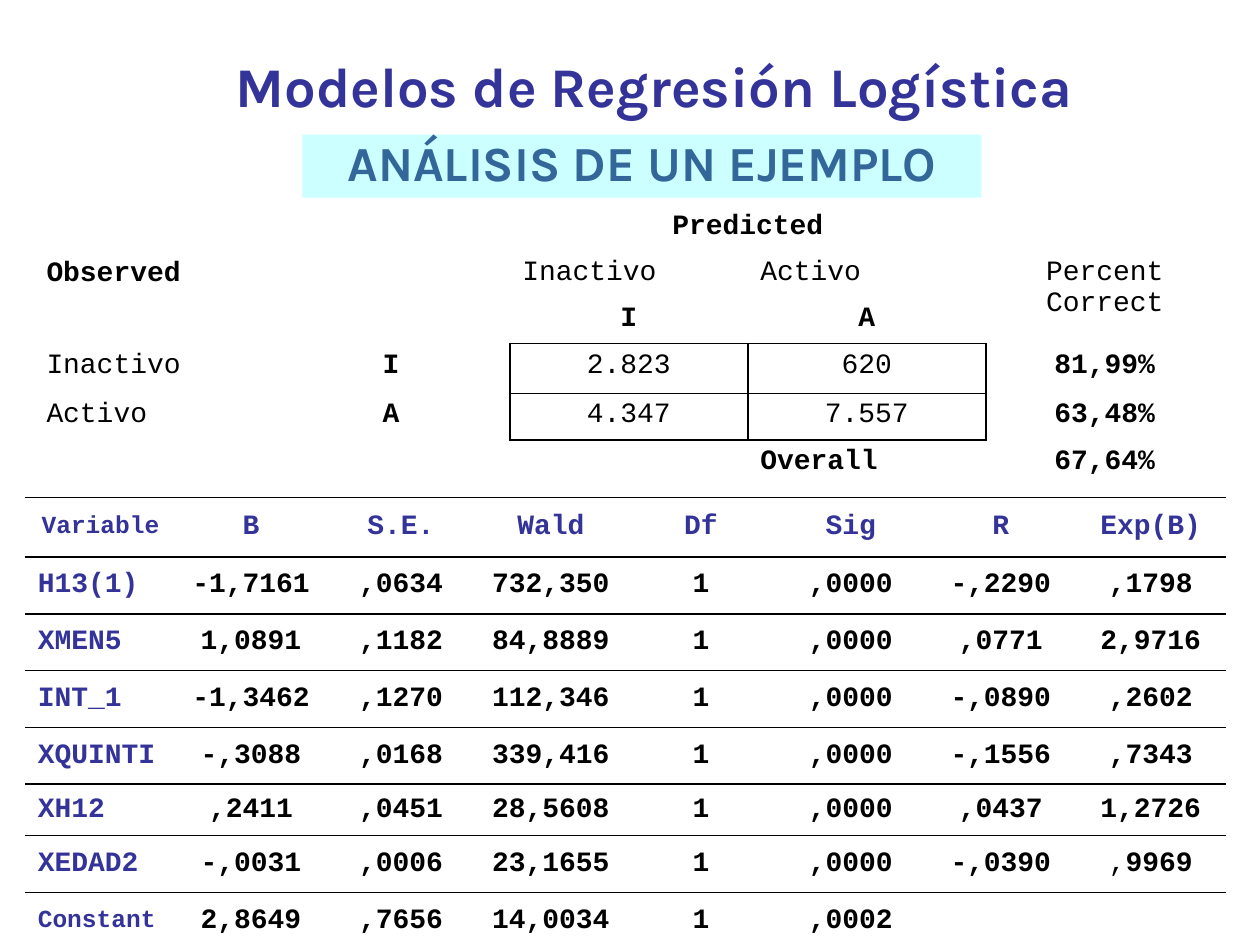
from lxml import etree
from pptx import Presentation
from pptx.dml.color import RGBColor
from pptx.enum.shapes import MSO_SHAPE
from pptx.enum.text import MSO_ANCHOR, MSO_AUTO_SIZE, PP_ALIGN
from pptx.oxml.ns import qn
from pptx.util import Pt

LEFT, CENTER = PP_ALIGN.LEFT, PP_ALIGN.CENTER
TOP, MIDDLE = MSO_ANCHOR.TOP, MSO_ANCHOR.MIDDLE
RECTANGLE = MSO_SHAPE.RECTANGLE
FIT_SHAPE = MSO_AUTO_SIZE.SHAPE_TO_FIT_TEXT
INDIGO = RGBColor(0x33, 0x33, 0x99)
STEEL = RGBColor(0x33, 0x66, 0x99)
PALE_CYAN = RGBColor(0xCC, 0xFF, 0xFF)
BLACK = RGBColor(0, 0, 0)
NO_TABLE_STYLE = "{2D5ABB26-0587-4C30-8999-92F81FD0307C}"

# row, column, text, bold, alignment
CLASSIFICATION = [
    (0, 0, "Observed", True, LEFT),
    (0, 2, "Predicted", True, CENTER),
    (1, 2, "Inactivo", False, LEFT),
    (1, 3, "Activo", False, LEFT),
    (1, 4, "Percent Correct", False, CENTER),
    (2, 2, "I", True, CENTER),
    (2, 3, "A", True, CENTER),
    (3, 0, "Inactivo", False, LEFT),
    (3, 1, "I", True, CENTER),
    (3, 2, "2.823", False, CENTER),
    (3, 3, "620", False, CENTER),
    (3, 4, "81,99%", True, CENTER),
    (4, 0, "Activo", False, LEFT),
    (4, 1, "A", True, CENTER),
    (4, 2, "4.347", False, CENTER),
    (4, 3, "7.557", False, CENTER),
    (4, 4, "63,48%", True, CENTER),
    (5, 3, "Overall", True, LEFT),
    (5, 4, "67,64%", True, CENTER),
]
MERGES = [(0, 0, 2, 0), (0, 1, 2, 1), (0, 2, 0, 3), (1, 4, 2, 4), (5, 0, 5, 2)]
COUNT_BORDERS = {(3, 2): "LRTB", (3, 3): "LRTB", (4, 2): "LRT", (4, 3): "LRTB"}

COEFFICIENTS = [
    ("Variable", "B", "S.E.", "Wald", "Df", "Sig", "R", "Exp(B)"),
    ("H13(1)", "-1,7161", ",0634", "732,350", "1", ",0000", "-,2290", ",1798"),
    ("XMEN5", "1,0891", ",1182", "84,8889", "1", ",0000", ",0771", "2,9716"),
    ("INT_1", "-1,3462", ",1270", "112,346", "1", ",0000", "-,0890", ",2602"),
    ("XQUINTI", "-,3088", ",0168", "339,416", "1", ",0000", "-,1556", ",7343"),
    ("XH12", ",2411", ",0451", "28,5608", "1", ",0000", ",0437", "1,2726"),
    ("XEDAD2", "-,0031", ",0006", "23,1655", "1", ",0000", "-,0390", ",9969"),
    ("Constant", "2,8649", ",7656", "14,0034", "1", ",0002", "", ""),
]
SMALL_LABELS = ("Variable", "Constant")


def space_before_percent(paragraph, percent):
    spacing = etree.SubElement(paragraph._p.get_or_add_pPr(), qn("a:spcBef"))
    etree.SubElement(spacing, qn("a:spcPct"), val=str(percent * 1000))


class SlideBuilder:
    heading_font = "Karla"
    table_font = "Courier New"
    table_size = 16

    def __init__(self, slide):
        self.slide = slide

    def format_run(self, run, font, size, color, bold=True):
        run.font.name = font
        run.font.size = Pt(size)
        run.font.color.rgb = color
        run.font.bold = bold

    def heading(self, shape, text, size, color, alignment, anchor):
        frame = shape.text_frame
        frame.text = text
        frame.word_wrap = False
        frame.auto_size = FIT_SHAPE
        frame.vertical_anchor = anchor
        paragraph = frame.paragraphs[0]
        paragraph.alignment = alignment
        self.format_run(paragraph.runs[0], self.heading_font, size, color)
        return paragraph

    def title(self, text, left, top, width, height):
        shape = self.slide.shapes.title
        shape.left, shape.top = Pt(left), Pt(top)
        shape.width, shape.height = Pt(width), Pt(height)
        self.heading(shape, text, 32, INDIGO, LEFT, TOP)

    def banner(self, text, *box):
        shape = self.slide.shapes.add_shape(RECTANGLE, *map(Pt, box))
        shape.shadow.inherit = False
        shape.fill.solid()
        shape.fill.fore_color.rgb = PALE_CYAN
        shape.line.fill.background()
        paragraph = self.heading(shape, text, 28, STEEL, CENTER, MIDDLE)
        paragraph.line_spacing = 0.85
        space_before_percent(paragraph, 50)

    def table(self, left, top, column_widths, row_heights):
        frame = self.slide.shapes.add_table(
            len(row_heights), len(column_widths), Pt(left), Pt(top),
            Pt(sum(column_widths)), Pt(sum(row_heights)))
        table = frame.table
        table.first_row = table.horz_banding = False
        table._tbl.tblPr.find(qn("a:tableStyleId")).text = NO_TABLE_STYLE
        for column, width in zip(table.columns, column_widths):
            column.width = Pt(width)
        for row, height in zip(table.rows, row_heights):
            row.height = Pt(height)
        for cell in table.iter_cells():
            cell.fill.background()
            etree.SubElement(cell.text_frame.paragraphs[0]._p, qn("a:endParaRPr"),
                             sz=str(self.table_size * 100))
        return table

    def cell_text(self, cell, text, bold, color, alignment, anchor, size=table_size):
        cell.text_frame.text = text
        cell.vertical_anchor = anchor
        paragraph = cell.text_frame.paragraphs[0]
        space_before_percent(paragraph, 20)
        paragraph.alignment = alignment
        self.format_run(paragraph.runs[0], self.table_font, size, color, bold)
        return paragraph

    def borders(self, cell, sides):
        """Draw 1 pt black lines on the sides named by the letters L, R, T, B."""
        properties = cell._tc.get_or_add_tcPr()
        for position, side in enumerate(sides):
            line = etree.Element(qn("a:ln" + side), w=str(Pt(1)))
            fill = etree.SubElement(line, qn("a:solidFill"))
            etree.SubElement(fill, qn("a:srgbClr"), val=str(BLACK))
            properties.insert(position, line)

    def classification_table(self):
        table = self.table(19.4, 116.6, [136] * 5, [26.6, 26.6, 26.6, 28.4, 26.6, 26.6])
        for first_row, first_column, last_row, last_column in MERGES:
            table.cell(first_row, first_column).merge(table.cell(last_row, last_column))
        for row, column, text, bold, alignment in CLASSIFICATION:
            anchor = MIDDLE if row == 0 else TOP
            self.cell_text(table.cell(row, column), text, bold, BLACK, alignment, anchor)
        for position, sides in COUNT_BORDERS.items():
            self.borders(table.cell(*position), sides)

    def coefficient_table(self):
        heights = [34, 32.4, 32.4, 32.4, 32.4, 29.5, 32.4, 32.4]
        table = self.table(14.4, 284.4, [86.2] + [85.7] * 7, heights)
        for row, values in enumerate(COEFFICIENTS):
            for column, text in enumerate(values):
                cell = table.cell(row, column)
                self.borders(cell, "TB")
                if not text:
                    continue
                color = INDIGO if row == 0 or column == 0 else BLACK
                alignment = LEFT if column == 0 and row > 0 else CENTER
                size = 14 if text in SMALL_LABELS else self.table_size
                paragraph = self.cell_text(cell, text, True, color, alignment, MIDDLE, size)
                if text == ",9969":
                    comma = paragraph.runs[0]
                    comma.text, comma.font.bold = ",", False
                    digits = paragraph.add_run()
                    digits.text = "9969"
                    self.format_run(digits, self.table_font, size, color)


def main():
    presentation = Presentation()
    presentation.slide_width, presentation.slide_height = Pt(720), Pt(540)
    builder = SlideBuilder(presentation.slides.add_slide(presentation.slide_layouts[5]))
    builder.title("Modelos de Regresión Logística", 127.4, 25.9, 519.8, 45.4)
    builder.banner("ANÁLISIS DE UN EJEMPLO", 172.8, 77, 388, 36)
    builder.classification_table()
    builder.coefficient_table()
    presentation.save("out.pptx")


if __name__ == "__main__":
    main()
